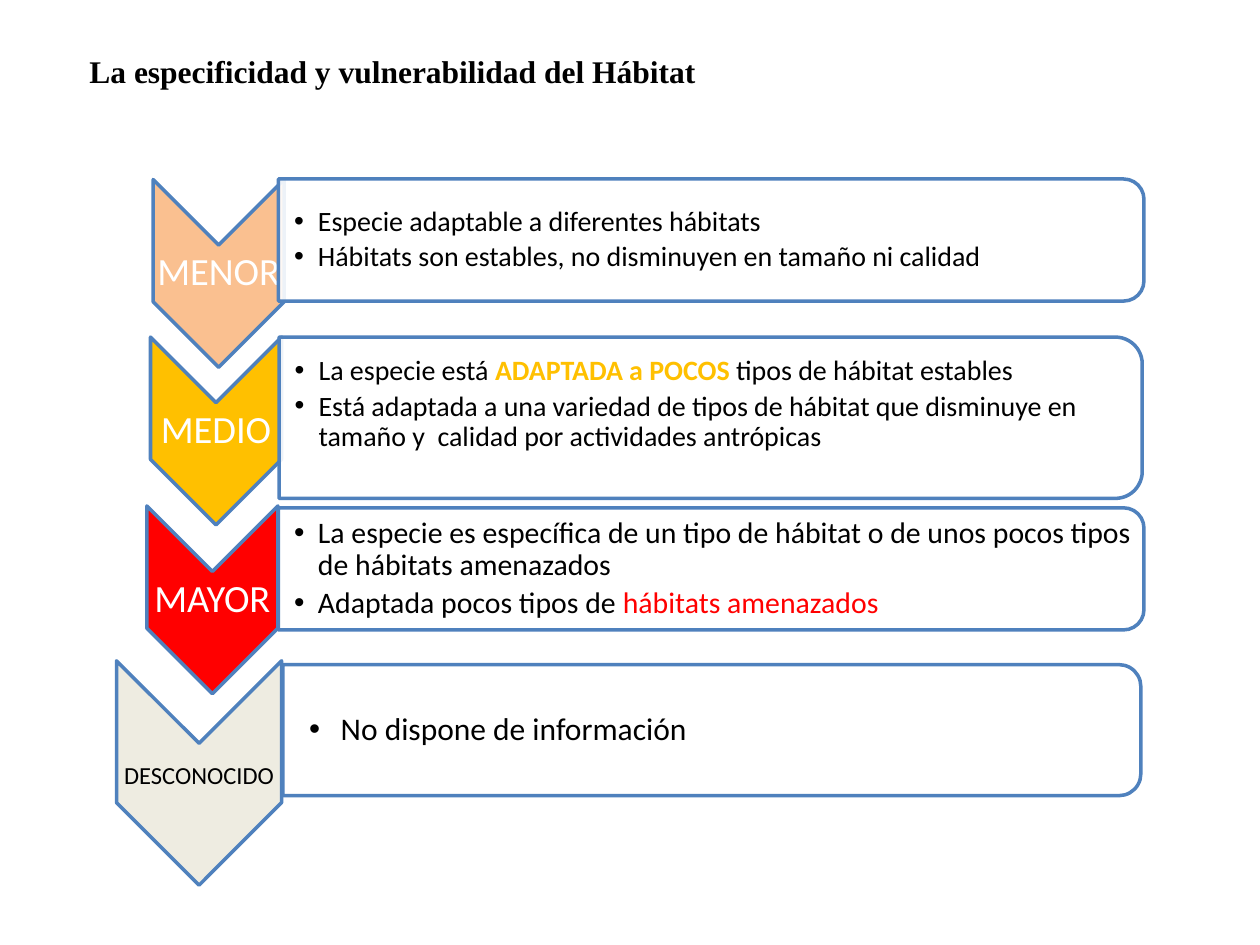
from dataclasses import dataclass
from typing import NamedTuple

from lxml import etree
from pptx import Presentation
from pptx import util as u
from pptx.dml.color import RGBColor
from pptx.enum import shapes, text
from pptx.oxml.ns import qn

BLACK, WHITE, OUTLINE = "000000", "FFFFFF", "4F81BD"
AMBER, RED = "FFC000", "FF0000"
BODY_FONT, TITLE_FONT = "Calibri", "Times New Roman"


class Box(NamedTuple):
    left: float
    top: float
    width: float
    height: float


class Piece(NamedTuple):
    text: str
    color: str = BLACK
    bold: bool = False


@dataclass
class Level:
    label: str
    chevron: Box
    fill: str
    band: Box
    bullets: list[list[Piece]]
    size: float
    label_size: float = 22
    label_color: str = WHITE
    label_height: float = 32.4
    indent: float = 13.7
    left_inset: float = 8.9
    bottom_inset: float = 0.9


LEVELS = [
    Level("MENOR", Box(87.5, 102.6, 74.9, 107.3), "FAC090",
          Box(159.1, 102.3, 494.6, 69.8),
          [[Piece("Especie adaptable a diferentes hábitats")],
           [Piece("Hábitats son estables, no disminuyen en tamaño ni calidad")]],
          size=16),
    Level("MEDIO", Box(86, 192.6, 74.9, 107.3), AMBER,
          Box(159.5, 192.6, 493.2, 92.2),
          [[Piece("La especie está "), Piece("ADAPTADA a POCOS", AMBER, True),
            Piece(" tipos de hábitat estables")],
           [Piece("Está adaptada a una variedad de tipos de hábitat que disminuye en "
                  "tamaño y  calidad por actividades antrópicas")]],
          size=16, bottom_inset=16),
    Level("MAYOR", Box(83.9, 289.1, 74.9, 107.3), RED,
          Box(159.1, 290.2, 494.6, 69.8),
          [[Piece("La especie es específica de un tipo de hábitat o de unos pocos "
                  "tipos de hábitats amenazados")],
           [Piece("Adaptada pocos tipos de "), Piece("hábitats amenazados", RED)]],
          size=17),
    Level("DESCONOCIDO", Box(66.6, 377.6, 94.3, 128.2), "EEECE1",
          Box(161.6, 379.8, 490.3, 74.9),
          [[Piece("No dispone de información")]],
          size=18, label_size=14, label_color=BLACK, label_height=38.2,
          indent=18, left_inset=15.1),
]


def rgb(color: str) -> RGBColor:
    return RGBColor.from_string(color)


def format_run(run, size: float, color: str, bold: bool = False,
               font: str = BODY_FONT) -> None:
    run.font.name = font
    run.font.size = u.Pt(size)
    run.font.bold = bold
    run.font.color.rgb = rgb(color)


def add_turned_shape(slide, kind, box: Box, fill: str):
    """Add a shape turned by 90 degrees that fills the box once turned."""
    left = box.left + (box.width - box.height) / 2
    top = box.top + (box.height - box.width) / 2
    shape = slide.shapes.add_shape(
        kind, u.Pt(left), u.Pt(top), u.Pt(box.height), u.Pt(box.width))
    shape.rotation = 90
    shape.shadow.inherit = False
    shape.fill.solid()
    shape.fill.fore_color.rgb = rgb(fill)
    shape.line.color.rgb = rgb(OUTLINE)
    shape.line.width = u.Pt(2)
    return shape


def add_text_frame(slide, box: Box, left_inset: float, inset: float):
    frame = slide.shapes.add_textbox(*(u.Pt(length) for length in box)).text_frame
    frame.word_wrap = True
    frame.vertical_anchor = text.MSO_ANCHOR.MIDDLE
    frame.margin_left = u.Pt(left_inset)
    frame.margin_top = frame.margin_right = frame.margin_bottom = u.Pt(inset)
    return frame


def set_bullet(paragraph, indent: float) -> None:
    properties = paragraph._p.get_or_add_pPr()
    properties.set("marL", str(u.Pt(indent)))
    properties.set("indent", str(-u.Pt(indent)))
    etree.SubElement(properties, qn("a:buFont")).set("typeface", "Arial")
    etree.SubElement(properties, qn("a:buChar")).set("char", "•")


def draw_title(slide) -> None:
    title = slide.shapes.title
    title.left, title.top = u.Pt(29.5), u.Pt(15.1)
    title.width, title.height = u.Pt(678.2), u.Pt(36)
    frame = title.text_frame
    frame.text = "La especificidad y vulnerabilidad del Hábitat"
    frame.auto_size = text.MSO_AUTO_SIZE.NONE
    frame.vertical_anchor = text.MSO_ANCHOR.TOP
    paragraph = frame.paragraphs[0]
    paragraph.alignment = text.PP_ALIGN.LEFT
    paragraph.line_spacing = 1.5
    paragraph.space_before = u.Pt(3.6)
    paragraph._p.get_or_add_pPr().set("marL", str(u.Pt(14.4)))
    format_run(paragraph.runs[0], 18, BLACK, True, TITLE_FONT)


def draw_chevron(slide, level: Level) -> None:
    box = level.chevron
    add_turned_shape(slide, shapes.MSO_SHAPE.CHEVRON, box, level.fill)
    label_box = Box(box.left, box.top + box.width / 2, box.width, level.label_height)
    frame = add_text_frame(slide, label_box, 1.4, 1.4)
    frame.text = level.label
    paragraph = frame.paragraphs[0]
    paragraph.alignment = text.PP_ALIGN.CENTER
    paragraph.line_spacing = 0.9
    format_run(paragraph.runs[0], level.label_size, level.label_color)


def draw_band(slide, level: Level) -> None:
    box = level.band
    band = add_turned_shape(
        slide, shapes.MSO_SHAPE.ROUND_2_SAME_RECTANGLE, box, WHITE)
    color = band._element.spPr.find(qn("a:solidFill"))[0]
    etree.SubElement(color, qn("a:alpha")).set("val", "90000")

    corner = box.height * 0.05
    frame = add_text_frame(
        slide,
        Box(box.left, box.top + corner, box.width - corner, box.height - 2 * corner),
        level.left_inset, 0.9)
    frame.margin_bottom = u.Pt(level.bottom_inset)
    for index, pieces in enumerate(level.bullets):
        paragraph = frame.add_paragraph() if index else frame.paragraphs[0]
        paragraph.line_spacing = 0.9
        paragraph.space_after = u.Pt(level.size * 0.18)
        set_bullet(paragraph, level.indent)
        for piece in pieces:
            run = paragraph.add_run()
            run.text = piece.text
            format_run(run, level.size, piece.color, piece.bold)


def main() -> None:
    presentation = Presentation()
    presentation.slide_width, presentation.slide_height = u.Pt(720), u.Pt(540)
    slide = presentation.slides.add_slide(presentation.slide_layouts[5])
    draw_title(slide)
    for level in LEVELS:
        draw_chevron(slide, level)
        draw_band(slide, level)
    presentation.save("out.pptx")


if __name__ == "__main__":
    main()
